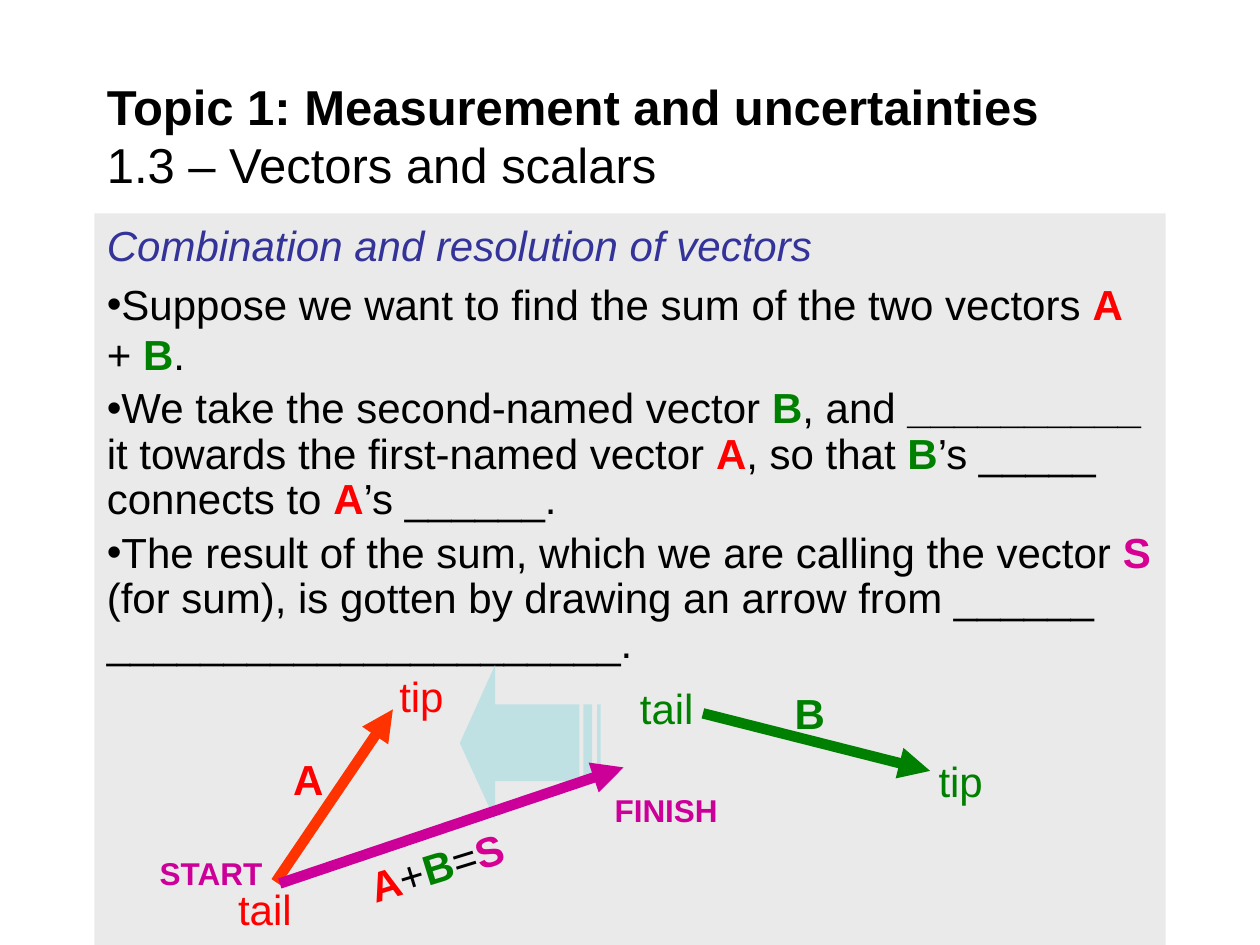
import copy
from dataclasses import dataclass

import pptx
import pptx.dml.color
import pptx.enum.dml
import pptx.enum.shapes
import pptx.enum.text
import pptx.util
from lxml import etree
from pptx.oxml.ns import qn

Cm = pptx.util.Cm


@dataclass(frozen=True)
class Theme:
    font: str = "Arial"
    title_size: int = 28
    text_size: int = 24
    small_size: int = 18
    line_width: int = 6
    ink: str = "000000"
    heading: str = "333399"
    panel: str = "EAEAEA"
    red: str = "FF0000"
    red_line: str = "FF3300"
    green: str = "008000"
    sum_text: str = "D60093"
    sum_line: str = "CC0099"
    block: str = "BBE0E3"


THEME = Theme()
VECTOR_COLORS = {"A": THEME.red, "B": THEME.green, "S": THEME.sum_text}


def rgb(color):
    return pptx.dml.color.RGBColor.from_string(color)


def add_span(para, text, size, color=THEME.ink, bold=False, italic=False):
    span = para.add_run()
    span.text = text
    span.font.name = THEME.font
    span.font.size = pptx.util.Pt(size)
    span.font.color.rgb = rgb(color)
    span.font.bold = bold
    span.font.italic = italic
    return span


def add_vector_text(para, pieces):
    """Write the pieces in black, with a piece that names a vector bold in its colour."""
    for piece in pieces:
        color = VECTOR_COLORS.get(piece.strip(), THEME.ink)
        bold = color != THEME.ink or piece.startswith("__________ ")
        add_span(para, piece, THEME.text_size, color, bold)


def place(shape, box):
    shape.left, shape.top, shape.width, shape.height = (Cm(length) for length in box)


def fill_title(shape, box):
    place(shape, box)
    frame = shape.text_frame
    frame.auto_size = pptx.enum.text.MSO_AUTO_SIZE.NONE
    frame.vertical_anchor = pptx.enum.text.MSO_ANCHOR.MIDDLE
    para = frame.paragraphs[0]
    para.alignment = pptx.enum.text.PP_ALIGN.LEFT
    topic = add_span(para, "Topic 1: Measurement and uncertainties", THEME.title_size, bold=True)
    para.add_line_break()
    # The break needs the type size too, or it takes the larger master size
    para._p.find(qn("a:br")).append(copy.deepcopy(topic._r.rPr))
    add_span(para, "1.3 – Vectors and scalars", THEME.title_size)


def fill_body(shape, box):
    place(shape, box)
    shape.fill.solid()
    shape.fill.fore_color.rgb = rgb(THEME.panel)
    frame = shape.text_frame
    frame.auto_size = pptx.enum.text.MSO_AUTO_SIZE.NONE

    heading = frame.paragraphs[0]
    add_span(heading, "Combination and resolution of vectors",
             THEME.text_size, THEME.heading, italic=True)
    etree.SubElement(heading._p.get_or_add_pPr(), qn("a:buNone"))

    bullets = [
        (1.0, ["Suppose we want to find the sum of the two vectors ", "A", " + ", "B", "."]),
        (0.9, ["We take the second-named vector ", "B", ", and ", "__________ ",
               "it towards the first-named vector ", "A", ", so that ", "B",
               "’s _____ connects to ", "A", "’s ______."]),
        (0.9, ["The result of the sum, which we are calling the vector ", "S ",
               "(for sum), is gotten by drawing an arrow from "
               "______ ______________________."]),
    ]
    for spacing, pieces in bullets:
        para = frame.add_paragraph()
        para.line_spacing = spacing
        add_vector_text(para, pieces)
    for para in frame.paragraphs:
        para.space_before = pptx.util.Pt(0.2 * THEME.text_size)
        properties = para._p.get_or_add_pPr()
        properties.set("marL", "0")
        properties.set("indent", "0")


def add_vector(page, start, end, color):
    line = page.shapes.add_connector(
        pptx.enum.shapes.MSO_CONNECTOR.STRAIGHT, *(Cm(value) for value in start + end))
    line.line.color.rgb = rgb(color)
    line.line.width = pptx.util.Pt(THEME.line_width)
    etree.SubElement(line.line._get_or_add_ln(), qn("a:tailEnd"), type="triangle")
    etree.SubElement(line._element.spPr, qn("a:effectLst"))


def add_label(page, box):
    """Add an empty text box and return its paragraph and the box itself."""
    label = page.shapes.add_textbox(*(Cm(length) for length in box))
    label.text_frame.word_wrap = True
    return label.text_frame.paragraphs[0], label


def add_block_arrow(page, left, top):
    """Draw a left-pointing arrow with a tail of two stripes."""
    high, low = 0.79, 2.34
    head = [(0.71, 0), (0.71, high), (2.41, high), (2.41, low), (0.71, low), (0.71, 3.12),
            (0, 1.57)]
    stripes = [[(x1, high), (x2, high), (x2, low), (x1, low)]
               for x1, x2 in ((2.49, 2.67), (2.77, 2.84))]
    outlines = [[(Cm(x), Cm(y)) for x, y in outline] for outline in [head] + stripes]
    builder = page.shapes.build_freeform(*outlines[0][0])
    for index, outline in enumerate(outlines):
        if index:
            builder.move_to(*outline[0])
        builder.add_line_segments(outline[1:], close=True)
    arrow = builder.convert_to_shape(Cm(left), Cm(top))
    arrow.shadow.inherit = False
    arrow.line.fill.background()
    arrow.fill.solid()
    arrow.fill.fore_color.rgb = rgb(THEME.block)
    color = arrow._element.spPr.find(qn("a:solidFill"))[0]
    etree.SubElement(color, qn("a:alpha"), val="89000")


def add_diagram(page, left, top):
    def at(x, y):
        return left + x, top + y

    add_vector(page, at(3.66, 4.39), at(6.02, 0.91), THEME.red_line)
    add_vector(page, at(12.27, 0.99), at(16.85, 2.15), THEME.green)
    add_block_arrow(page, *at(7.37, 0.02))
    add_vector(page, at(3.74, 4.42), at(10.67, 2.08), THEME.sum_line)

    big, small = (THEME.text_size, 1.27), (THEME.small_size, 1.02)
    labels = [
        ("A", 3.76, 1.67, 1.19, big, THEME.red, True),
        ("B", 13.87, 0.35, 1.19, big, THEME.green, True),
        ("tail", 10.75, 0.25, 1.8, big, THEME.green, False),
        ("tail", 2.65, 4.29, 1.8, big, THEME.red, False),
        ("tip", 16.77, 1.72, 1.8, big, THEME.green, False),
        ("tip", 5.9, 0, 1.8, big, THEME.red, False),
        ("START", 1.07, 3.7, 2.67, small, THEME.sum_line, True),
        ("FINISH", 10.24, 2.43, 2.79, small, THEME.sum_line, True),
    ]
    for text, x, y, width, (size, height), color, bold in labels:
        para, _ = add_label(page, at(x, y) + (width, height))
        add_span(para, text, size, color, bold)

    para, label = add_label(page, at(5.21, 3.09) + (5.72, 1.27))
    label.rotation = 342.9
    add_vector_text(para, "A+B=S")


def main():
    deck = pptx.Presentation()
    deck.slide_width, deck.slide_height = Cm(25.4), Cm(19.05)
    page = deck.slides.add_slide(deck.slide_layouts[1])
    margin, width = 1.9, 21.6
    fill_title(page.shapes.title, (margin, 1.48, width, 2.48))
    fill_body(page.placeholders[1], (margin, 4.3, width, 14.75))
    add_diagram(page, margin, 13.39)
    deck.save("out.pptx")


if __name__ == "__main__":
    main()
